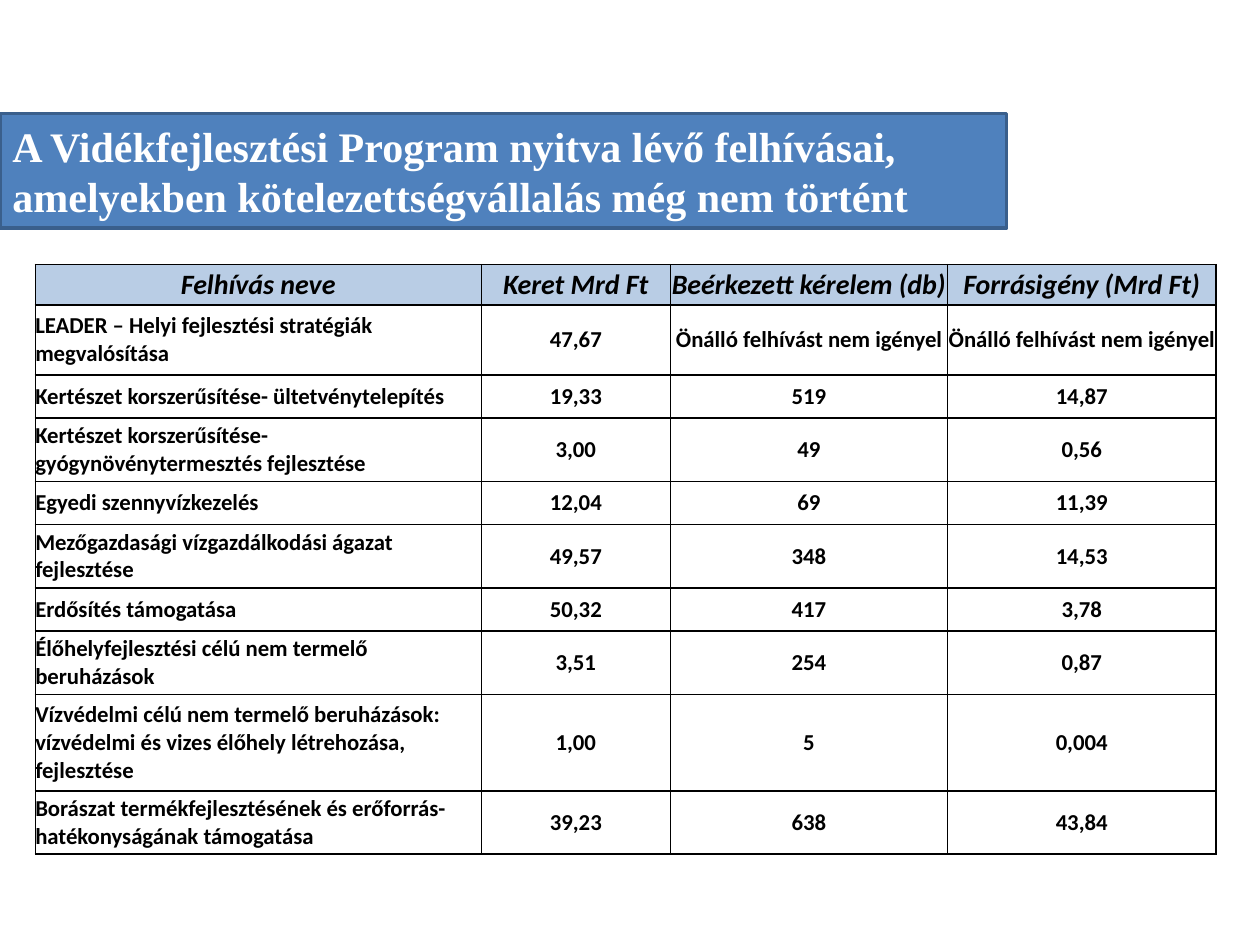
from lxml.etree import SubElement
from pptx import Presentation
from pptx.dml.color import RGBColor
from pptx.enum.shapes import MSO_SHAPE
from pptx.enum.text import MSO_ANCHOR, PP_ALIGN
from pptx.oxml.ns import qn
from pptx.util import Inches, Pt

BLACK = RGBColor(0x00, 0x00, 0x00)
WHITE = RGBColor(0xFF, 0xFF, 0xFF)
HEADER_BLUE = RGBColor(0xB9, 0xCD, 0xE5)
BANNER_BLUE = RGBColor(0x4F, 0x81, 0xBD)
BANNER_EDGE = RGBColor(0x3A, 0x5F, 0x8C)

TITLE = ("A Vidékfejlesztési Program nyitva lévő felhívásai, "
         "amelyekben kötelezettségvállalás még nem történt")
NO_CALL = "Önálló felhívást nem igényel"
HEADINGS = ("Felhívás neve", "Keret Mrd Ft", "Beérkezett kérelem (db)", "Forrásigény (Mrd Ft)")
CALLS = [
    ("LEADER – Helyi fejlesztési stratégiák megvalósítása", "47,67", NO_CALL, NO_CALL),
    ("Kertészet korszerűsítése- ültetvénytelepítés", "19,33", "519", "14,87"),
    ("Kertészet korszerűsítése- gyógynövénytermesztés fejlesztése", "3,00", "49", "0,56"),
    ("Egyedi szennyvízkezelés", "12,04", "69", "11,39"),
    ("Mezőgazdasági vízgazdálkodási ágazat fejlesztése", "49,57", "348", "14,53"),
    ("Erdősítés támogatása", "50,32", "417", "3,78"),
    ("Élőhelyfejlesztési célú nem termelő beruházások", "3,51", "254", "0,87"),
    ("Vízvédelmi célú nem termelő beruházások: vízvédelmi és vizes élőhely "
     "létrehozása, fejlesztése", "1,00", "5", "0,004"),
    ("Borászat termékfejlesztésének és erőforrás-hatékonyságának támogatása",
     "39,23", "638", "43,84"),
]
COLUMN_WIDTHS = (3.54, 1.5, 2.2, 2.13)
ROW_HEIGHTS = (0.32, 0.55, 0.34, 0.5, 0.34, 0.5, 0.34, 0.5, 0.76, 0.5)


def write_text(frame, text, *, font, size, color, align=PP_ALIGN.LEFT, italic=False):
    """Put one bold paragraph into a text frame."""
    frame.word_wrap = True
    para = frame.paragraphs[0]
    para.alignment = align
    span = para.add_run()
    span.text = text
    span.font.name, span.font.size = font, Pt(size)
    span.font.bold, span.font.italic = True, italic
    span.font.color.rgb = color


def add_borders(cell, color=BLACK, width=1):
    """Outline a cell; border elements must come before its fill."""
    properties = cell._tc.get_or_add_tcPr()
    for side in ("a:lnL", "a:lnR", "a:lnT", "a:lnB"):
        line = SubElement(properties, qn(side), w=str(Pt(width)))
        fill = SubElement(line, qn("a:solidFill"))
        SubElement(fill, qn("a:srgbClr"), val=str(color))


def add_banner(page, left, top, width, height):
    box = page.shapes.add_shape(MSO_SHAPE.RECTANGLE, left, top, width, height)
    box.shadow.inherit = False
    box.fill.solid()
    box.fill.fore_color.rgb = BANNER_BLUE
    box.line.color.rgb = BANNER_EDGE
    box.line.width = Pt(2)
    box.text_frame.vertical_anchor = MSO_ANCHOR.MIDDLE
    write_text(box.text_frame, TITLE, font="Times New Roman", size=24, color=WHITE)


def fill_cell(cell, text, is_header, is_name):
    cell.margin_left = cell.margin_right = cell.margin_top = cell.margin_bottom = 0
    cell.vertical_anchor = MSO_ANCHOR.MIDDLE
    add_borders(cell)
    cell.fill.solid()
    cell.fill.fore_color.rgb = HEADER_BLUE if is_header else WHITE
    write_text(cell.text_frame, text, font="Calibri", size=16 if is_header else 13,
               color=BLACK, italic=is_header,
               align=PP_ALIGN.LEFT if is_name and not is_header else PP_ALIGN.CENTER)


def add_calls_table(page, left, top, width, height):
    rows = [HEADINGS, *CALLS]
    table = page.shapes.add_table(len(rows), len(HEADINGS), left, top, width, height).table
    # Share the box out in proportion to the column and row sizes
    for column, share in zip(table.columns, COLUMN_WIDTHS):
        column.width = round(width * share / sum(COLUMN_WIDTHS))
    for row, share in zip(table.rows, ROW_HEIGHTS):
        row.height = round(height * share / sum(ROW_HEIGHTS))
    for r, texts in enumerate(rows):
        for c, text in enumerate(texts):
            fill_cell(table.cell(r, c), text, is_header=r == 0, is_name=c == 0)


def main():
    deck = Presentation()
    deck.slide_width, deck.slide_height = Inches(10), Inches(7.5)
    page = deck.slides.add_slide(deck.slide_layouts[6])
    # Table of open calls, then the title banner
    add_calls_table(page, Inches(0.28), Inches(2.1), Inches(9.37), Inches(4.68))
    add_banner(page, 0, Inches(0.9), Inches(7.99), Inches(0.91))
    deck.save("out.pptx")


if __name__ == "__main__":
    main()
